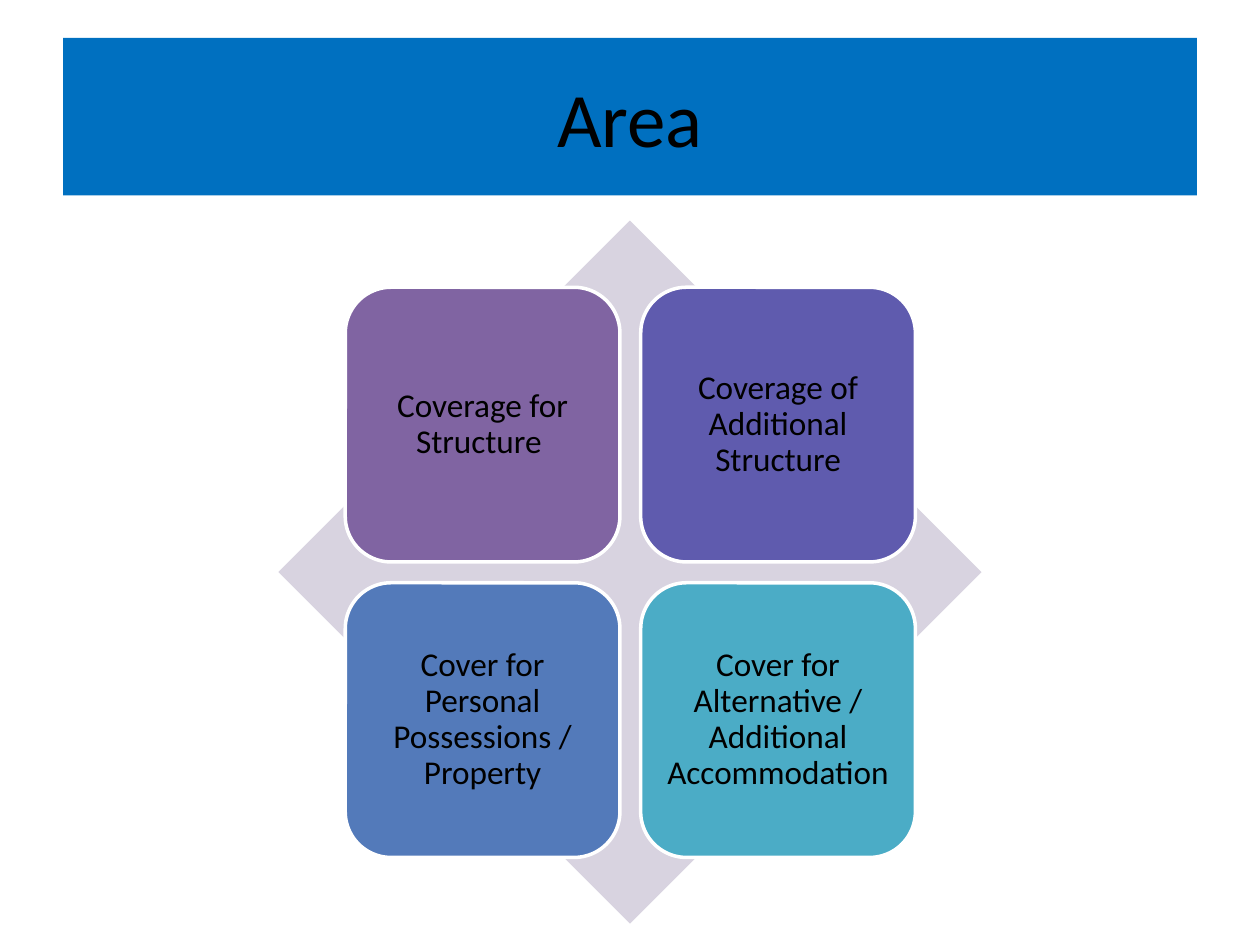
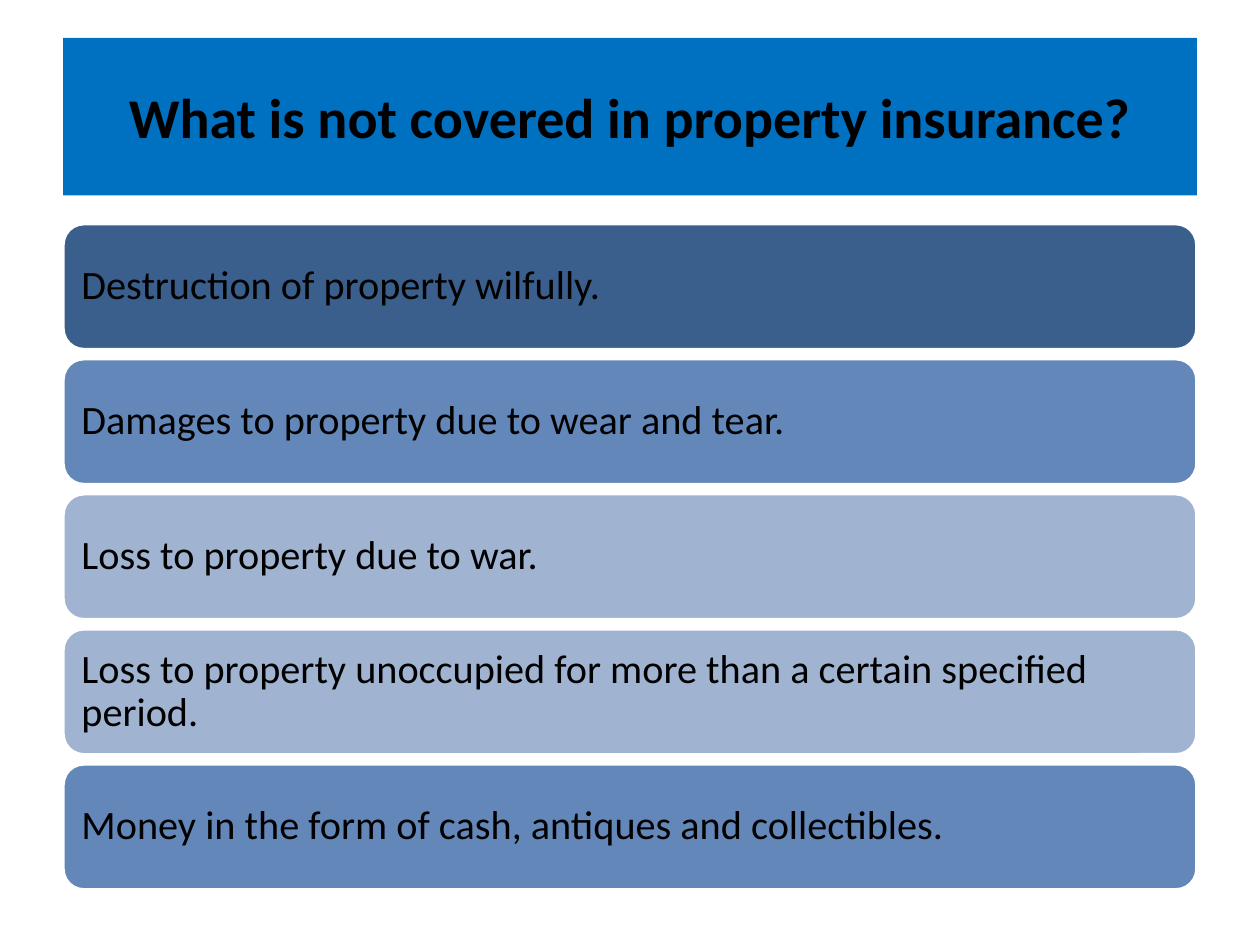
import pptx
import pptx.util
import pptx.dml.color
import pptx.enum.shapes
import pptx.enum.text

COLORS = {
    "title_band": "0070C0",
    "text": "000000",
    "outline": "FFFFFF",
    "diamond": "D8D3E0",
    "purple": "8064A2",
    "indigo": "5F5BAE",
    "blue": "537ABA",
    "teal": "4BACC6",
    "dark_bar": "3A5F8C",
    "middle_bar": "6387B9",
    "light_bar": "A0B3D1",
}
FONT = "Calibri"
COLUMNS, ROWS = 100, 75
Shapes = pptx.enum.shapes.MSO_SHAPE
Align = pptx.enum.text.PP_ALIGN

COVERS = [
    ("Coverage for Structure ", "purple"),
    ("Coverage of Additional Structure", "indigo"),
    ("Cover for Personal Possessions / Property", "blue"),
    ("Cover for Alternative / Additional Accommodation", "teal"),
]
EXCLUSIONS = [
    ("Destruction of property wilfully.", "dark_bar"),
    ("Damages to property due to wear and tear.", "middle_bar"),
    ("Loss to property due to war.", "light_bar"),
    ("Loss to property unoccupied for more than a certain specified period.", "light_bar"),
    ("Money in the form of cash, antiques and collectibles.", "middle_bar"),
]


class DeckBuilder:
    def __init__(self):
        self.deck = pptx.Presentation()
        self.deck.slide_width = pptx.util.Inches(10)
        self.deck.slide_height = pptx.util.Inches(7.5)
        self.page = None

    def place(self, column, row, width, height):
        cell_width = self.deck.slide_width / COLUMNS
        cell_height = self.deck.slide_height / ROWS
        return (round(column * cell_width), round(row * cell_height),
                round(width * cell_width), round(height * cell_height))

    def color(self, name):
        return pptx.dml.color.RGBColor.from_string(COLORS[name])

    def paint(self, shape, fill):
        shape.fill.solid()
        shape.fill.fore_color.rgb = self.color(fill)

    def add_text(self, shape, text, size, align, bold=False):
        frame = shape.text_frame
        frame.word_wrap = True
        frame.auto_size = pptx.enum.text.MSO_AUTO_SIZE.NONE
        frame.vertical_anchor = pptx.enum.text.MSO_ANCHOR.MIDDLE
        para = frame.paragraphs[0]
        para.alignment = align
        span = para.add_run()
        span.text = text
        span.font.name = FONT
        span.font.size = pptx.util.Pt(size)
        span.font.bold = bold
        span.font.color.rgb = self.color("text")
        return para

    def add_page(self, title, size, bold=False):
        self.page = self.deck.slides.add_slide(self.deck.slide_layouts.get_by_name("Title Only"))
        band = self.page.shapes.title
        band.left, band.top, band.width, band.height = self.place(5, 3, 90, 12.5)
        self.paint(band, "title_band")
        self.add_text(band, title, size, Align.CENTER, bold)

    def add_figure(self, kind, area, fill):
        shape = self.page.shapes.add_shape(kind, *self.place(*area))
        shape.shadow.inherit = False
        self.paint(shape, fill)
        shape.line.fill.background()
        return shape

    def add_card(self, area, fill, text, size, align, inset):
        card = self.add_figure(Shapes.ROUNDED_RECTANGLE, area, fill)
        card.line.color.rgb = self.color("outline")
        card.line.width = pptx.util.Pt(2)
        frame = card.text_frame
        frame.margin_left = frame.margin_right = pptx.util.Inches(inset)
        frame.margin_top = frame.margin_bottom = pptx.util.Inches(inset)
        self.add_text(card, text, size, align).line_spacing = 0.9


def build_area(builder):
    builder.add_page("Area", 44)
    builder.add_figure(Shapes.DIAMOND, (22.1, 17.5, 55.8, 55.8), "diamond")
    side, pitch = 21.8, 23.45
    for index, (text, fill) in enumerate(COVERS):
        row, column = divmod(index, 2)
        area = (27.4 + column * pitch, 22.8 + row * pitch, side, side)
        builder.add_card(area, fill, text, 19, Align.CENTER, 0.08)


def build_exclusions(builder):
    builder.add_page("What is not covered in property insurance?", 32, bold=True)
    for index, (text, fill) in enumerate(EXCLUSIONS):
        area = (5, 17.75 + index * 10.72, 90, 10)
        builder.add_card(area, fill, text, 23, Align.LEFT, 0.1)


def main():
    builder = DeckBuilder()
    build_area(builder)
    build_exclusions(builder)
    builder.deck.save("out.pptx")


if __name__ == "__main__":
    main()
